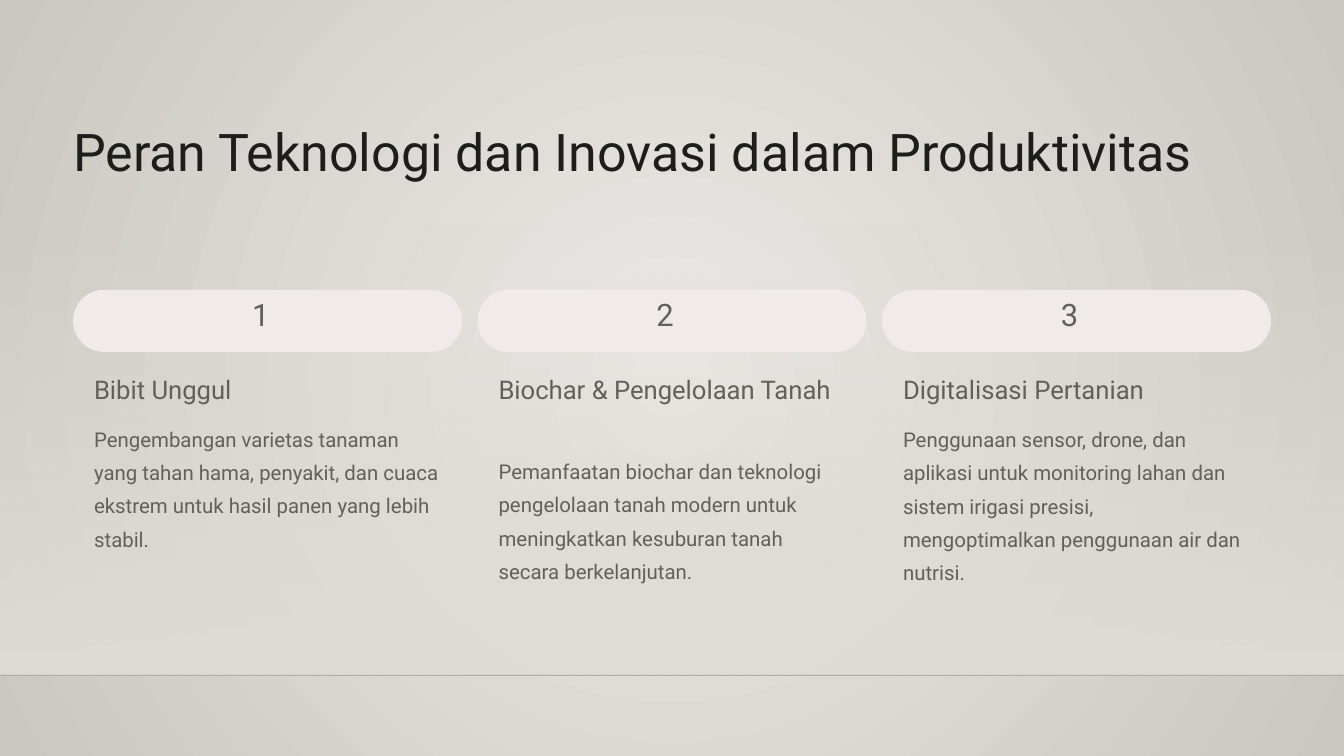
from dataclasses import dataclass

from lxml.etree import SubElement
from pptx import Presentation
from pptx.dml.color import RGBColor
from pptx.enum.shapes import MSO_CONNECTOR, MSO_SHAPE
from pptx.enum.text import MSO_ANCHOR, MSO_AUTO_SIZE, PP_ALIGN
from pptx.oxml.ns import qn
from pptx.util import Pt

FONT = "Roboto"
INK = RGBColor(0x1D, 0x1D, 0x1B)
GREY = RGBColor(0x61, 0x61, 0x5C)
PILL = RGBColor(0xF0, 0xEA, 0xEA)
CENTRE = RGBColor(0xEC, 0xEA, 0xE7)
EDGE = RGBColor(0xCA, 0xC7, 0xC1)
GROUND = RGBColor(0xDF, 0xDB, 0xD5)
HORIZON = RGBColor(0x00, 0x00, 0x01)

WIDTH, HEIGHT = 1152, 648
BAND_TOP, HORIZON_Y = 190.8, 578.9
LEFT, PITCH = 62.64, 346.7
PILL_TOP, PILL_W, PILL_H = 248.4, 333.4, 53.3
NUMBER_DX, NUMBER_DY = 153.4, 10.1
INSET, TEXT_W = 18, 297.4
HEADING_TOP, HEADING_LINE, BODY_GAP, BODY_LINE = 319.7, 27.5, 11.4, 28.5


@dataclass
class Column:
    heading: str
    body: str
    heading_lines: int
    body_lines: int


COLUMNS = [
    Column("Bibit Unggul",
           "Pengembangan varietas tanaman yang tahan hama, penyakit, dan cuaca "
           "ekstrem untuk hasil panen yang lebih stabil.", 1, 4),
    Column("Biochar & Pengelolaan Tanah",
           "Pemanfaatan biochar dan teknologi pengelolaan tanah modern untuk "
           "meningkatkan kesuburan tanah secara berkelanjutan.", 2, 5),
    Column("Digitalisasi Pertanian",
           "Penggunaan sensor, drone, dan aplikasi untuk monitoring lahan dan "
           "sistem irigasi presisi, mengoptimalkan penggunaan air dan nutrisi.", 1, 5),
]


def set_text(sp, text: str, *, size: float, line: float, color: RGBColor = GREY) -> None:
    tf = sp.text_frame
    tf.word_wrap = True
    tf.auto_size = MSO_AUTO_SIZE.NONE
    tf.vertical_anchor = MSO_ANCHOR.TOP
    tf.margin_left = tf.margin_top = tf.margin_right = tf.margin_bottom = 0
    p = tf.paragraphs[0]
    p.alignment = PP_ALIGN.LEFT
    p.line_spacing = Pt(line)
    r = p.add_run()
    r.text = text
    r.font.name, r.font.size, r.font.color.rgb = FONT, Pt(size), color


def add_text(s, x: float, y: float, w: float, h: float, text: str, **fmt) -> None:
    set_text(s.shapes.add_textbox(Pt(x), Pt(y), Pt(w), Pt(h)), text, **fmt)


def set_gradient(fill, start: RGBColor, end: RGBColor) -> None:
    fill.gradient()
    for stop, color in zip(fill.gradient_stops, (start, end)):
        stop.color.rgb = color


def set_first_alpha(sp, percent: int) -> None:
    """Make the first explicit colour of a shape transparent."""
    color = next(sp.element.iter(qn("a:srgbClr")))
    SubElement(color, qn("a:alpha")).set("val", str(percent * 1000))


def paint_background(s) -> None:
    set_gradient(s.background.fill, CENTRE, EDGE)
    grad = next(s.element.iter(qn("a:gradFill")))
    grad.remove(grad.find(qn("a:lin")))
    circle = SubElement(grad, qn("a:path"))
    circle.set("path", "circle")
    focus = SubElement(circle, qn("a:fillToRect"))
    for side in "ltrb":
        focus.set(side, "50000")


def add_scenery(s):
    """Draw the fading band and the horizon; return the horizon line."""
    band = s.shapes.add_shape(MSO_SHAPE.RECTANGLE, 0, Pt(BAND_TOP),
                              Pt(WIDTH), Pt(HORIZON_Y - BAND_TOP))
    band.shadow.inherit = False
    band.line.fill.background()
    set_gradient(band.fill, GROUND, GROUND)
    band.fill.gradient_angle = 270
    set_first_alpha(band, 0)

    horizon = s.shapes.add_connector(MSO_CONNECTOR.STRAIGHT, 0, Pt(HORIZON_Y),
                                     Pt(WIDTH), Pt(HORIZON_Y))
    horizon.line.width = Pt(1)
    horizon.line.color.rgb = HORIZON
    set_first_alpha(horizon, 20)
    SubElement(horizon.element.spPr, qn("a:effectLst"))
    return horizon


def add_column(s, index: int, col: Column) -> None:
    x = LEFT + index * PITCH
    pill = s.shapes.add_shape(MSO_SHAPE.ROUNDED_RECTANGLE, Pt(x), Pt(PILL_TOP),
                              Pt(PILL_W), Pt(PILL_H))
    pill.adjustments[0] = 0.5
    pill.shadow.inherit = False
    pill.fill.solid()
    pill.fill.fore_color.rgb = PILL
    pill.line.fill.background()
    add_text(s, x + NUMBER_DX, PILL_TOP + NUMBER_DY, 26.6, 33.8, str(index + 1),
             size=26.5, line=26.5)

    heading_h = col.heading_lines * HEADING_LINE
    add_text(s, x + INSET, HEADING_TOP, TEXT_W, heading_h, col.heading,
             size=22, line=HEADING_LINE)
    add_text(s, x + INSET, HEADING_TOP + heading_h + BODY_GAP, TEXT_W,
             col.body_lines * BODY_LINE, col.body, size=17.5, line=BODY_LINE)


def main() -> None:
    prs = Presentation()
    prs.slide_width, prs.slide_height = Pt(WIDTH), Pt(HEIGHT)
    s = prs.slides.add_slide(prs.slide_layouts[5])
    paint_background(s)
    horizon = add_scenery(s)

    title = s.shapes.title
    title.left, title.top = Pt(LEFT), Pt(100.8)
    title.width, title.height = Pt(1026.7), Pt(111.6)
    set_text(title, "Peran Teknologi dan Inovasi dalam Produktivitas",
             size=44.5, line=55.5, color=INK)
    horizon.element.addnext(title.element)

    for index, col in enumerate(COLUMNS):
        add_column(s, index, col)
    prs.save("out.pptx")


if __name__ == "__main__":
    main()
